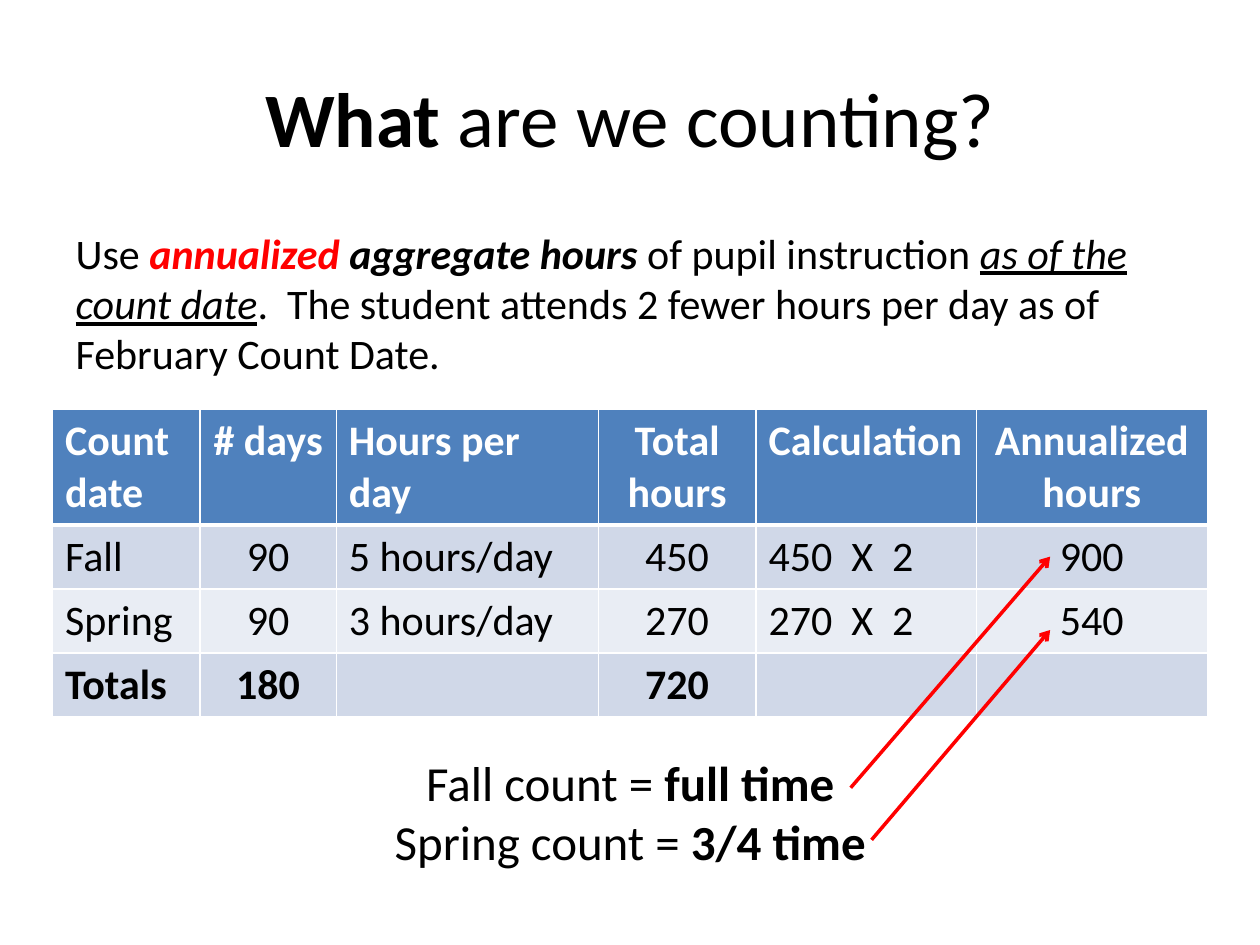
from lxml.etree import SubElement
from pptx import Presentation
from pptx.dml.color import RGBColor
from pptx.enum.shapes import MSO_CONNECTOR as Connector
from pptx.enum.text import MSO_ANCHOR as Anchor, MSO_AUTO_SIZE as AutoSize, PP_ALIGN as Align
from pptx.oxml.ns import qn
from pptx.util import Cm, Pt

COLORS = {
    "text": "000000",
    "accent": "FF0000",
    "white": "FFFFFF",
    "header": "4F81BD",
    "band_dark": "D0D8E8",
    "band_light": "E9EDF4",
}
FONT = "Calibri"

COLUMN_WIDTHS = [2.97, 2.75, 5.28, 3.18, 4.44, 4.66]
CENTERED_COLUMNS = {1, 3, 5}
HEADER_HEIGHT, ROW_HEIGHT = 2.3, 1.29
ROWS = [
    ["Count date", "# days", "Hours per day", "Total hours", "Calculation", "Annualized hours"],
    ["Fall", "90", "5 hours/day", "450", "450  X  2", "900"],
    ["Spring", "90", "3 hours/day", "270", "270  X  2", "540"],
    ["Totals", "180", "", "720", "", ""],
]


def rgb(name):
    return RGBColor.from_string(COLORS[name])


def add_span(para, text, size, color="text", bold=False, italic=False, underline=False):
    span = para.add_run()
    span.text = text
    font = span.font
    font.name, font.size = FONT, Pt(size)
    font.bold, font.italic, font.underline = bold, italic, underline
    font.color.rgb = rgb(color)


def place(shape, left, top, width, height):
    shape.left, shape.top = Cm(left), Cm(top)
    shape.width, shape.height = Cm(width), Cm(height)


def fill_title(title):
    place(title, 1.27, 0.76, 22.86, 3.18)
    title.text_frame.vertical_anchor = Anchor.MIDDLE
    para = title.text_frame.paragraphs[0]
    para.alignment = Align.CENTER
    add_span(para, "What", 44, bold=True)
    add_span(para, " are we counting?", 44)


def fill_body(body):
    place(body, 1.27, 4.45, 22.86, 3.38)
    body.text_frame.auto_size = AutoSize.NONE
    para = body.text_frame.paragraphs[0]
    # Plain paragraph without bullet or hanging indent
    properties = para._p.get_or_add_pPr()
    properties.set("marL", "0")
    properties.set("indent", "0")
    SubElement(properties, qn("a:buNone"))
    add_span(para, "Use ", 24)
    add_span(para, "annualized", 24, "accent", bold=True, italic=True)
    add_span(para, " aggregate hours ", 24, bold=True, italic=True)
    add_span(para, "of pupil instruction ", 24)
    add_span(para, "as of the count date", 24, italic=True, underline=True)
    add_span(para, ".  The student attends 2 fewer hours per day as of February Count Date.", 24)


def set_borders(cell, top, bottom):
    properties = cell._tc.get_or_add_tcPr()
    for side, width in (("L", 1), ("R", 1), ("T", top), ("B", bottom)):
        line = SubElement(properties, qn(f"a:ln{side}"), w=str(Pt(width)))
        fill = SubElement(line, qn("a:solidFill"))
        SubElement(fill, qn("a:srgbClr"), val=COLORS["white"])


def add_hours_table(page):
    height = HEADER_HEIGHT + ROW_HEIGHT * (len(ROWS) - 1)
    table = page.shapes.add_table(len(ROWS), len(COLUMN_WIDTHS), Cm(1.06), Cm(8.26),
                                  Cm(sum(COLUMN_WIDTHS)), Cm(height)).table
    for column, width in zip(table.columns, COLUMN_WIDTHS):
        column.width = Cm(width)
    for i, texts in enumerate(ROWS):
        is_header = i == 0
        table.rows[i].height = Cm(HEADER_HEIGHT if is_header else ROW_HEIGHT)
        band = "header" if is_header else "band_dark" if i % 2 else "band_light"
        for j, text in enumerate(texts):
            cell = table.cell(i, j)
            set_borders(cell, top=3 if i == 1 else 1, bottom=3 if is_header else 1)
            cell.fill.solid()
            cell.fill.fore_color.rgb = rgb(band)
            if text:
                para = cell.text_frame.paragraphs[0]
                para.alignment = Align.CENTER if j in CENTERED_COLUMNS else Align.LEFT
                add_span(para, text, 24, "white" if is_header else "text",
                         bold=i in (0, len(ROWS) - 1))


def add_conclusions(page):
    box = page.shapes.add_textbox(Cm(6.99), Cm(15.04), Cm(11.43), Cm(2.64))
    frame = box.text_frame
    frame.word_wrap = True
    lines = [("Fall count = ", "full time"), ("Spring count = ", "3/4 time")]
    for i, (label, result) in enumerate(lines):
        para = frame.add_paragraph() if i else frame.paragraphs[0]
        para.alignment = Align.CENTER
        add_span(para, label, 28)
        add_span(para, result, 28, bold=True)


def add_arrow(page, *ends):
    arrow = page.shapes.add_connector(Connector.STRAIGHT, *map(Cm, ends))
    arrow.line.color.rgb = rgb("accent")
    arrow.line.width = Pt(2)
    SubElement(arrow.line._get_or_add_ln(), qn("a:tailEnd"), type="arrow")
    SubElement(arrow._element.spPr, qn("a:effectLst"))


def main():
    deck = Presentation()
    deck.slide_width, deck.slide_height = Cm(25.4), Cm(19.05)
    page = deck.slides.add_slide(deck.slide_layouts[1])

    # Heading and explanation
    fill_title(page.shapes.title)
    fill_body(page.placeholders[1])

    # Hours per count date
    add_hours_table(page)

    # Conclusions with arrows to the annualized hours
    add_conclusions(page)
    add_arrow(page, 17.15, 15.88, 21.17, 11.22)
    add_arrow(page, 17.57, 16.93, 21.17, 12.7)

    deck.save("out.pptx")


if __name__ == "__main__":
    main()
